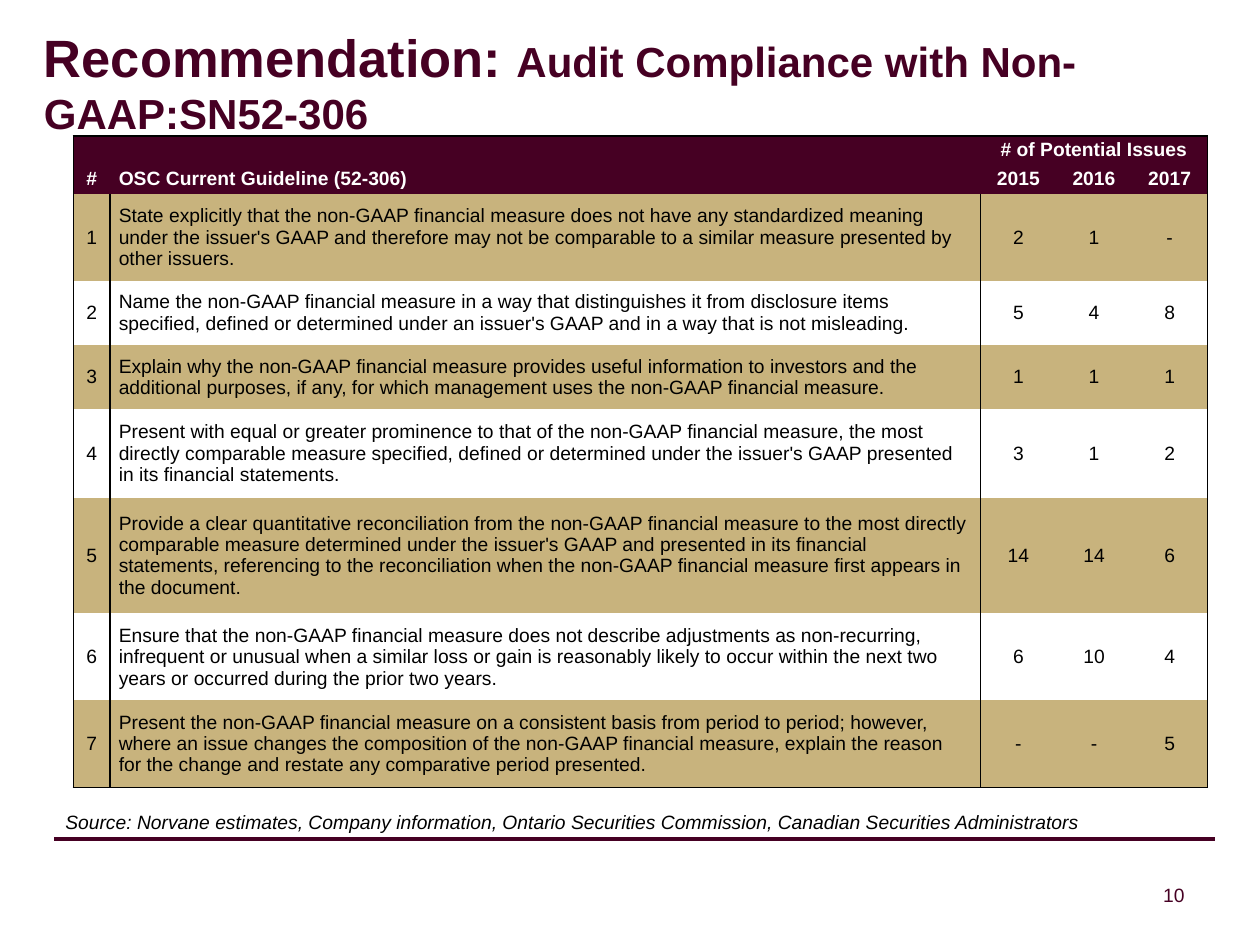
import pptx
import pptx.util
import pptx.dml.color
import pptx.enum.shapes
import pptx.enum.text
import pptx.oxml
import pptx.oxml.ns
from lxml import etree

COLORS = {"plum": "460023", "tan": "C8B37D", "white": "FFFFFF", "black": "000000"}
FONT = "Arial"
BODY = 11
WIDTH, HEIGHT = pptx.util.Inches(10), pptx.util.Inches(7.5)
ALIGN = pptx.enum.text.PP_ALIGN
ANCHOR = pptx.enum.text.MSO_ANCHOR
HEADER_ROWS = 2
COLUMN_SHARES = [2.9, 69.1, 6, 6, 6]
ROW_SHARES = [2.93, 3.2, 9.2, 6.8, 6.8, 9.33, 12.27, 9.2, 9.2]
NO_STYLE = "{2D5ABB26-0587-4C30-8999-92F81FD0307C}"

ROWS = [
    ["", "", "# of Potential Issues", "", ""],
    ["#", "OSC Current Guideline (52-306)", "2015", "2016", "2017"],
    ["1", "State explicitly that the non-GAAP financial measure does not have any standardized meaning under the issuer's GAAP and therefore may not be comparable to a similar measure presented by other issuers.", "2", "1", "-"],
    ["2", "Name the non-GAAP financial measure in a way that distinguishes it from disclosure items specified, defined or determined under an issuer's GAAP and in a way that is not misleading.", "5", "4", "8"],
    ["3", "Explain why the non-GAAP financial measure provides useful information to investors and the additional purposes, if any, for which management uses the non-GAAP financial measure.", "1", "1", "1"],
    ["4", "Present with equal or greater prominence to that of the non-GAAP financial measure, the most directly comparable measure specified, defined or determined under the issuer's GAAP presented in its financial statements.", "3", "1", "2"],
    ["5", "Provide a clear quantitative reconciliation from the non-GAAP financial measure to the most directly comparable measure determined under the issuer's GAAP and presented in its financial statements, referencing to the reconciliation when the non-GAAP financial measure first appears in the document.", "14", "14", "6"],
    ["6", "Ensure that the non-GAAP financial measure does not describe adjustments as non-recurring, infrequent or unusual when a similar loss or gain is reasonably likely to occur within the next two years or occurred during the prior two years.", "6", "10", "4"],
    ["7", "Present the non-GAAP financial measure on a consistent basis from period to period; however, where an issue changes the composition of the non-GAAP financial measure, explain the reason for the change and restate any comparative period presented.", "-", "-", "5"],
]


def x(share):
    return round(WIDTH * share / 100)


def y(share):
    return round(HEIGHT * share / 100)


def rgb(name):
    return pptx.dml.color.RGBColor.from_string(COLORS[name])


def add_run(p, text, size, color, bold=False, italic=False):
    r = p.add_run()
    r.text = text
    r.font.name = FONT
    r.font.size = pptx.util.Pt(size)
    r.font.bold = bold
    r.font.italic = italic
    r.font.color.rgb = rgb(color)


def add_text(s, left, top, width, height, anchor, align=ALIGN.LEFT):
    sp = s.shapes.add_textbox(x(left), y(top), x(width), y(height))
    tf = sp.text_frame
    tf.word_wrap = True
    tf.vertical_anchor = anchor
    p = tf.paragraphs[0]
    p.alignment = align
    return p


def add_rule(s, left, right, top):
    sp = s.shapes.add_connector(
        pptx.enum.shapes.MSO_CONNECTOR.STRAIGHT, x(left), y(top), x(right), y(top))
    sp.line.color.rgb = rgb("plum")
    sp.line.width = pptx.util.Pt(2)
    etree.SubElement(sp._element.spPr, pptx.oxml.ns.qn("a:effectLst"))


def set_borders(cell, sides):
    tcPr = cell._tc.get_or_add_tcPr()
    for side, shown in sides.items():
        ln = etree.SubElement(tcPr, pptx.oxml.ns.qn(f"a:ln{side}"), w=str(pptx.util.Pt(1)))
        if shown:
            fill = etree.SubElement(ln, pptx.oxml.ns.qn("a:solidFill"))
            etree.SubElement(fill, pptx.oxml.ns.qn("a:srgbClr"), val=COLORS["black"])
        else:
            etree.SubElement(ln, pptx.oxml.ns.qn("a:noFill"))


def has_edge(row, edge):
    return edge in (0, len(COLUMN_SHARES)) or (row >= HEADER_ROWS and edge in (1, 2))


def fill_cell(cell, row, col, text):
    header = row < HEADER_ROWS
    span = cell.span_width if cell.is_merge_origin else 1
    set_borders(cell, {
        "L": has_edge(row, col),
        "R": has_edge(row, col + span),
        "T": row == 0,
        "B": row == len(ROWS) - 1,
    })
    cell.fill.solid()
    cell.fill.fore_color.rgb = rgb("plum" if header else ("tan", "white")[row % 2])
    cell.vertical_anchor = ANCHOR.MIDDLE
    cell.margin_left = cell.margin_right = pptx.util.Inches(0.07)
    cell.margin_top = cell.margin_bottom = 0
    p = cell.text_frame.paragraphs[0]
    p.alignment = ALIGN.LEFT if col == 1 else ALIGN.CENTER
    if text:
        add_run(p, text, BODY, "white" if header else "black", bold=header)
    else:
        etree.SubElement(p._p, pptx.oxml.ns.qn("a:endParaRPr"), sz=str(BODY * 100))


def add_guidelines(s):
    frame = s.shapes.add_table(len(ROWS), len(COLUMN_SHARES), x(5.83), y(14.4),
                               x(sum(COLUMN_SHARES)), y(sum(ROW_SHARES)))
    table = frame.table
    table.first_row = table.horz_banding = False
    table._tbl.tblPr.find(pptx.oxml.ns.qn("a:tableStyleId")).text = NO_STYLE
    for column, share in zip(table.columns, COLUMN_SHARES):
        column.width = x(share)
    for row, share in zip(table.rows, ROW_SHARES):
        row.height = y(share)
    table.cell(0, 2).merge(table.cell(0, 4))
    for row, texts in enumerate(ROWS):
        for col, text in enumerate(texts):
            fill_cell(table.cell(row, col), row, col, text)


def main():
    prs = pptx.Presentation()
    prs.slide_width, prs.slide_height = WIDTH, HEIGHT
    s = prs.slides.add_slide(prs.slide_layouts[6])
    add_rule(s, 4.3, 96.4, 88.8)
    p = add_text(s, 2.5, 0.27, 97.5, 16.67, ANCHOR.MIDDLE)
    add_run(p, "Recommendation: ", 30, "plum", bold=True)
    add_run(p, "Audit Compliance with Non-GAAP:SN52-306", 24, "plum", bold=True)
    p = add_text(s, 4.2, 85.07, 88.3, 3.87, ANCHOR.TOP)
    add_run(p, "Source: Norvane estimates, Company information, Ontario Securities Commission, Canadian Securities Administrators", BODY, "black", italic=True)
    add_guidelines(s)
    p = add_text(s, 71.7, 92, 23.3, 5.33, ANCHOR.MIDDLE, ALIGN.RIGHT)
    add_run(p, "10", BODY, "plum")
    prs.save("out.pptx")


if __name__ == "__main__":
    main()
